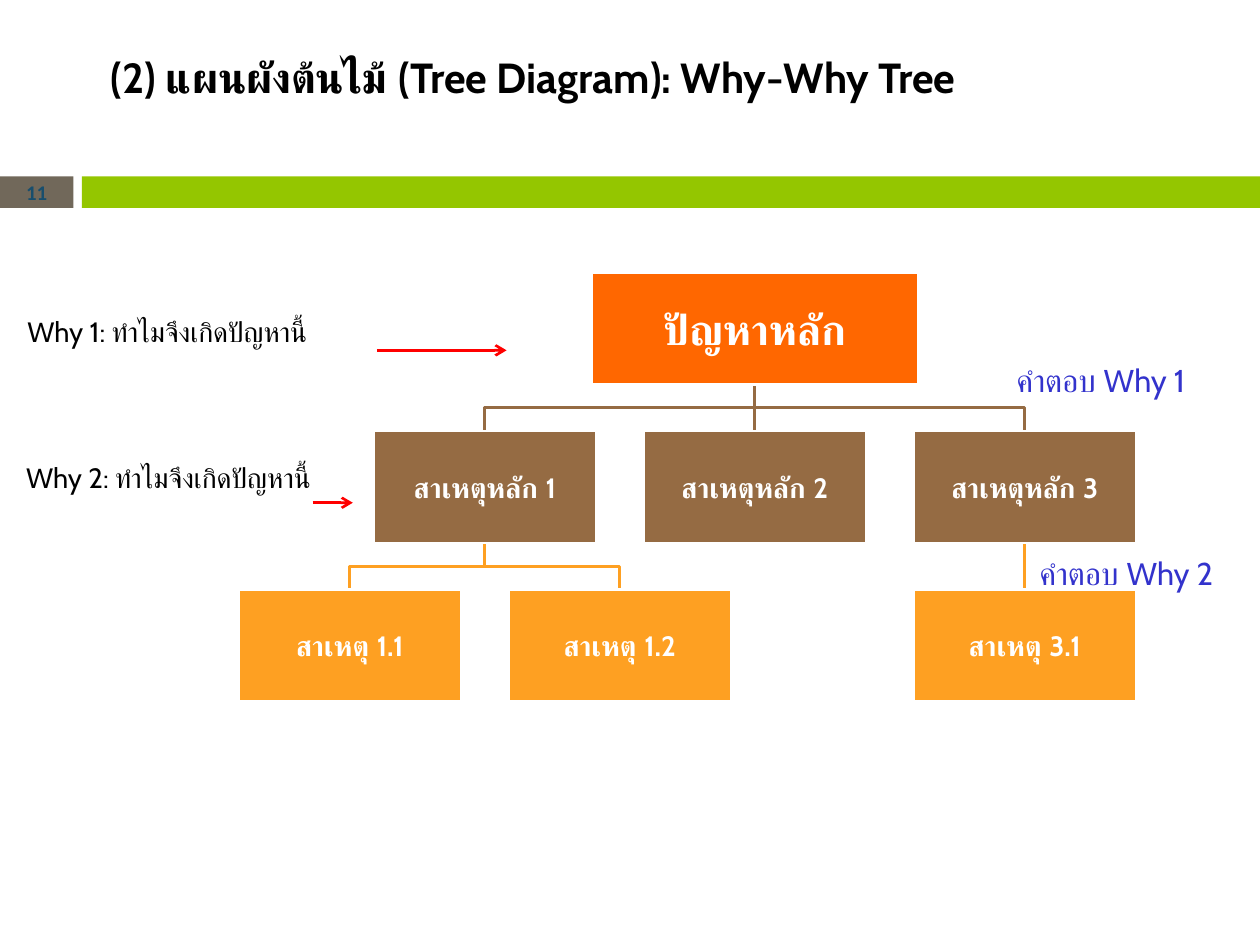
from dataclasses import dataclass

from lxml import etree
from pptx import Presentation
from pptx import util as u
from pptx.dml.color import RGBColor
from pptx.enum import shapes, text
from pptx.oxml import ns

Pt = u.Pt


@dataclass(frozen=True)
class Theme:
    font: str = "Cabin"
    number_font: str = "Calibri"
    ink: str = "000000"
    paper: str = "FFFFFF"
    tab: str = "71685A"
    bar: str = "94C600"
    number: str = "184E6D"
    answer: str = "3333CC"
    arrow: str = "FF0000"
    levels: tuple = ("FF6700", "956B43", "FEA022")
    title_size: float = 24
    root_size: float = 24
    cause_size: float = 16
    question_size: float = 16
    answer_size: float = 18
    number_size: float = 11.9
    line: float = 1.5


@dataclass(frozen=True)
class Cause:
    label: str
    level: int
    slot: float
    parent: int = -1


THEME = Theme()
CAUSES = [
    Cause("ปัญหาหลัก", 0, 1.5),
    Cause("สาเหตุหลัก 1", 1, 0.5, 0),
    Cause("สาเหตุหลัก 2", 1, 1.5, 0),
    Cause("สาเหตุหลัก 3", 1, 2.5, 0),
    Cause("สาเหตุ 1.1", 2, 0, 1),
    Cause("สาเหตุ 1.2", 2, 1, 1),
    Cause("สาเหตุ 3.1", 2, 2.5, 3),
]


def color(value):
    return RGBColor.from_string(value)


def write(frame, words, size, ink, bold=False, font=THEME.font,
          align=text.PP_ALIGN.LEFT, anchor=text.MSO_ANCHOR.TOP):
    frame.word_wrap = True
    frame.vertical_anchor = anchor
    paragraph = frame.paragraphs[0]
    paragraph.alignment = align
    run = paragraph.add_run()
    run.text = words
    run.font.name = font
    run.font.size = Pt(size)
    run.font.bold = bold
    run.font.color.rgb = color(ink)


def write_centred(frame, words, size, ink, margin, font=THEME.font):
    frame.margin_left = frame.margin_right = Pt(margin)
    frame.margin_top = frame.margin_bottom = Pt(margin)
    write(frame, words, size, ink, True, font,
          text.PP_ALIGN.CENTER, text.MSO_ANCHOR.MIDDLE)


def add_box(slide, box, fill, outline=None):
    rect = slide.shapes.add_shape(shapes.MSO_SHAPE.RECTANGLE, *map(Pt, box))
    rect.shadow.inherit = False
    rect.fill.solid()
    rect.fill.fore_color.rgb = color(fill)
    if outline:
        rect.line.color.rgb = color(outline)
        rect.line.width = Pt(THEME.line)
    else:
        rect.line.fill.background()
    return rect


def add_straight(slide, start, end, ink):
    line = slide.shapes.add_connector(
        shapes.MSO_CONNECTOR.STRAIGHT, *map(Pt, (*start, *end)))
    line.line.color.rgb = color(ink)
    line.line.width = Pt(THEME.line)
    etree.SubElement(line._element.spPr, ns.qn("a:effectLst"))
    return line


def add_elbow(slide, start, end, ink):
    middle = (start[1] + end[1]) / 2
    corners = [(start[0], middle), (end[0], middle), end]
    builder = slide.shapes.build_freeform(Pt(start[0]), Pt(start[1]))
    builder.add_line_segments([(Pt(x), Pt(y)) for x, y in corners], close=False)
    elbow = builder.convert_to_shape()
    elbow.shadow.inherit = False
    elbow.fill.background()
    elbow.line.color.rgb = color(ink)
    elbow.line.width = Pt(THEME.line)


def header_band(slide, box):
    left, top, width, height = box
    tab_width, gap = 42, 4.8
    bar_left = tab_width + gap
    tab = add_box(slide, (left, top, tab_width, height), THEME.tab)
    add_box(slide, (left + bar_left, top, width - bar_left, height), THEME.bar)
    write_centred(tab.text_frame, "11", THEME.number_size, THEME.number, 0,
                  THEME.number_font)


def heading(slide, box):
    title = slide.shapes.title
    title.left, title.top, title.width, title.height = map(Pt, box)
    frame = title.text_frame
    frame.auto_size = text.MSO_AUTO_SIZE.NONE
    frame.margin_left = Pt(43.2)
    write(frame, "(2) แผนผังต้นไม้ (Tree Diagram): Why-Why Tree",
          THEME.title_size, THEME.ink, True)


def cause_tree(slide, box):
    left, top, width, height = box
    root_width, cause_width, cause_height = 186.6, 127.3, 64
    column_step = (width - cause_width) / max(cause.slot for cause in CAUSES)
    row_step = (height - cause_height) / (len(THEME.levels) - 1)

    def top_middle(cause):
        return (left + cause_width / 2 + cause.slot * column_step,
                top + cause.level * row_step)

    straight_links = []
    for index, cause in enumerate(CAUSES):
        if cause.parent < 0:
            continue
        x, y = top_middle(CAUSES[cause.parent])
        start, end = (x, y + cause_height), top_middle(cause)
        ink = THEME.levels[cause.level]
        if CAUSES[cause.parent].slot == cause.slot:
            link = add_straight(slide, start, end, ink)
            straight_links.append((link, cause.parent, index))
        else:
            add_elbow(slide, start, end, ink)

    nodes = []
    for cause in CAUSES:
        is_root = cause.level == 0
        node_width = root_width if is_root else cause_width
        x, y = top_middle(cause)
        node = add_box(slide, (x - node_width / 2, y, node_width, cause_height),
                       THEME.levels[cause.level], THEME.paper)
        size = THEME.root_size if is_root else THEME.cause_size
        write_centred(node.text_frame, cause.label, size, THEME.paper, 1)
        nodes.append(node)

    for link, parent, child in straight_links:
        link.begin_connect(nodes[parent], 2)
        link.end_connect(nodes[child], 0)


def side_label(slide, box, words, size, ink):
    label = slide.shapes.add_textbox(*map(Pt, box))
    write(label.text_frame, words, size, ink)
    label.text_frame.auto_size = text.MSO_AUTO_SIZE.SHAPE_TO_FIT_TEXT


def question(slide, box, words, arrow_left, arrow_drop, arrow_length):
    left, top = box[:2]
    side_label(slide, box, words, THEME.question_size, THEME.ink)
    start = (left + arrow_left, top + arrow_drop)
    arrow = add_straight(slide, start, (start[0] + arrow_length, start[1]),
                         THEME.arrow)
    etree.SubElement(arrow.line._get_or_add_ln(), ns.qn("a:tailEnd"), type="arrow")


def answer(slide, box, words):
    side_label(slide, box, words, THEME.answer_size, THEME.answer)


def main():
    deck = Presentation()
    deck.slide_width, deck.slide_height = Pt(720), Pt(540)
    slide = deck.slides.add_slide(deck.slide_layouts[5])
    header_band(slide, (0, 100.8, 720, 18))
    heading(slide, (20.2, 25.9, 674.6, 44.6))
    cause_tree(slide, (136.2, 155.6, 513, 245.4))
    question(slide, (8.6, 176.4, 209.5, 26.6), "Why 1: ทำไมจึงเกิดปัญหานี้",
             206.7, 23.8, 74.2)
    question(slide, (7.9, 259.9, 211, 26.6), "Why 2: ทำไมจึงเกิดปัญหานี้",
             170.7, 27.4, 23)
    answer(slide, (573.8, 203, 146.2, 28.8), "คำตอบ Why 1")
    answer(slide, (586.8, 313.2, 146.2, 28.8), "คำตอบ Why 2")
    deck.save("out.pptx")


if __name__ == "__main__":
    main()
